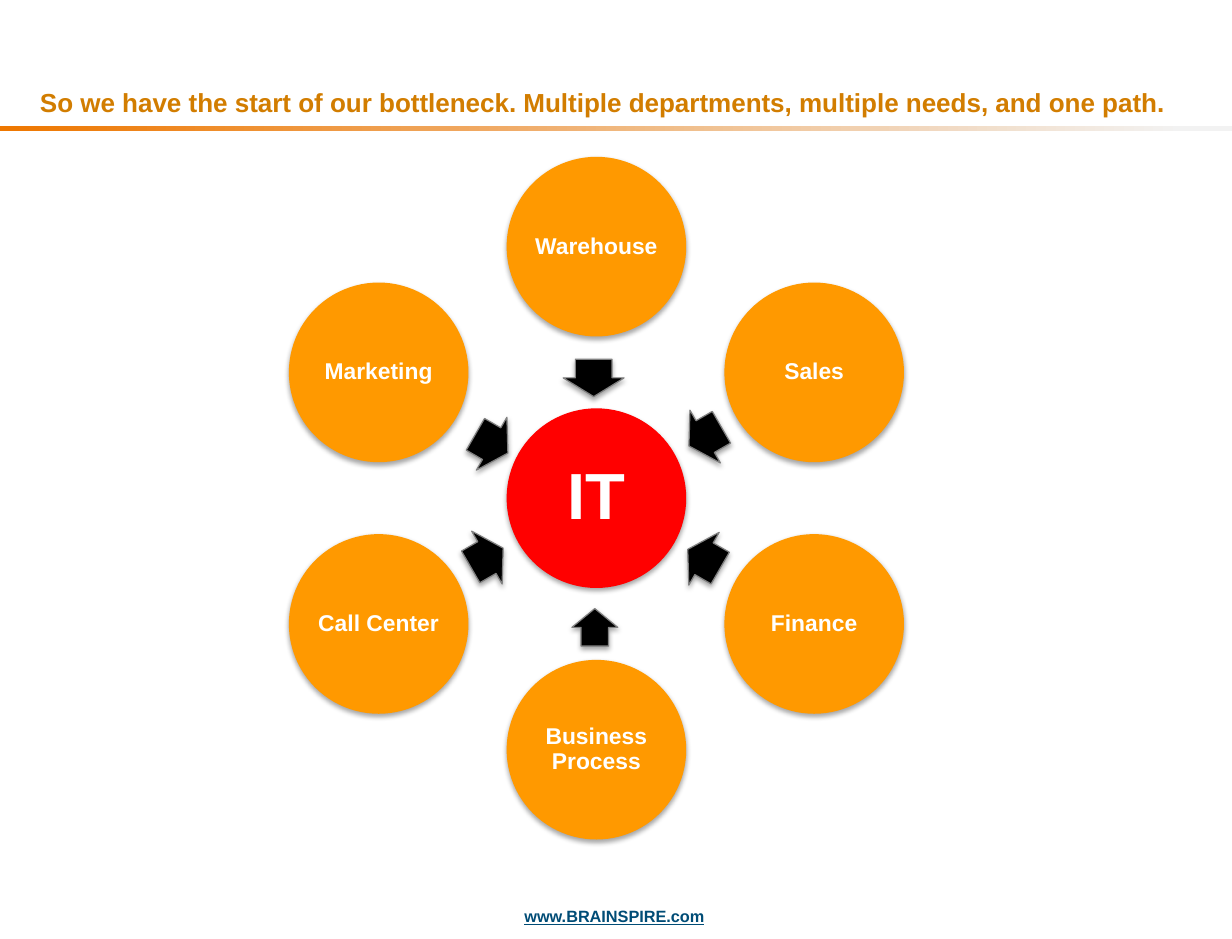
from math import cos, radians, sin

from lxml.etree import SubElement
from pptx import Presentation
from pptx.dml.color import RGBColor
from pptx.enum.shapes import MSO_SHAPE
from pptx.enum.text import MSO_ANCHOR, MSO_AUTO_SIZE, PP_ALIGN
from pptx.oxml.ns import qn
from pptx.util import Pt

COLORS = {
    "title": "D27D00", "link": "004C76", "bar": "EE7700", "fade": "F2F2F2",
    "hub": "FF0000", "dept": "FF9900", "arrow": "000000", "edge": "808080",
    "white": "FFFFFF", "shade": "000000",
}
HUB_X, HUB_Y = 366, 305.6
RING = 154.3
SIZE = 110.2

# Department, angle on the ring, arrow centre, arrow breadth
DEPTS = [
    ("Warehouse", -90, 364.3, 231.8, 37.4),
    ("Sales", -30, 432.7, 267.8, 37.4),
    ("Finance", 30, 432, 342.7, 37.4),
    ("Business Process", 90, 365, 384.8, 28.1),
    ("Call Center", 150, 298.8, 342, 37.4),
    ("Marketing", 210, 301.7, 272.2, 37.4),
]


def rgb(name):
    return RGBColor.from_string(COLORS[name])


class Deck:
    """Holds the style and the current slide."""

    font = "Arial"

    def __init__(self, wide, high):
        self.prs = Presentation()
        self.prs.slide_width, self.prs.slide_height = Pt(wide), Pt(high)
        self.slide = self.prs.slides.add_slide(self.prs.slide_layouts[5])

    def add_run(self, frame, text, size, color, align, line=False):
        para = frame.paragraphs[0]
        para.alignment = align
        run = para.add_run()
        run.text = text
        font = run.font
        font.name, font.size, font.bold = self.font, Pt(size), True
        font.color.rgb = rgb(color)
        if line:
            font.underline = True
        return para

    def title(self, text, x, y, w, h):
        box = self.slide.shapes.title
        box.left, box.top, box.width, box.height = Pt(x), Pt(y), Pt(w), Pt(h)
        frame = box.text_frame
        frame.auto_size = MSO_AUTO_SIZE.NONE
        frame.vertical_anchor = MSO_ANCHOR.BOTTOM
        frame.margin_left = frame.margin_right = Pt(7.9)
        self.add_run(frame, text, 16, "title", PP_ALIGN.LEFT)

    def label(self, text, x, y, w, h):
        box = self.slide.shapes.add_textbox(Pt(x), Pt(y), Pt(w), Pt(h))
        box.text_frame.word_wrap = True
        self.add_run(box.text_frame, text, 10, "link", PP_ALIGN.CENTER, True)

    def shape(self, kind, x, y, w, h):
        item = self.slide.shapes.add_shape(kind, Pt(x), Pt(y), Pt(w), Pt(h))
        item.shadow.inherit = False
        item.line.fill.background()
        return item

    def shade(self, item):
        effects = item.element.spPr.find(qn("a:effectLst"))
        outer = SubElement(effects, qn("a:outerShdw"), blurRad=str(Pt(3.1)),
                           dist=str(Pt(1.8)), dir="5400000", rotWithShape="0")
        tone = SubElement(outer, qn("a:srgbClr"), val=COLORS["shade"])
        SubElement(tone, qn("a:alpha"), val="35000")

    def bar(self, x, y, w, h):
        fill = self.shape(MSO_SHAPE.RECTANGLE, x, y, w, h).fill
        fill.gradient()
        fill.gradient_angle = 0
        for stop, name, spot in zip(fill.gradient_stops, ("bar", "fade"), (0, 0.96)):
            stop.color.rgb = rgb(name)
            stop.position = spot

    def disc(self, text, x, y, color, size, inset):
        item = self.shape(MSO_SHAPE.OVAL, x - SIZE / 2, y - SIZE / 2, SIZE, SIZE)
        item.fill.solid()
        item.fill.fore_color.rgb = rgb(color)
        self.shade(item)
        frame = item.text_frame
        frame.word_wrap = True
        frame.vertical_anchor = MSO_ANCHOR.MIDDLE
        frame.margin_left = frame.margin_right = Pt(inset)
        frame.margin_top = frame.margin_bottom = Pt(inset)
        para = self.add_run(frame, text, size, "white", PP_ALIGN.CENTER)
        para.line_spacing = 0.9

    def arrow(self, x, y, broad, turn):
        long = 23
        item = self.shape(MSO_SHAPE.RIGHT_ARROW, x - long / 2, y - broad / 2, long, broad)
        item.adjustments[0], item.adjustments[1] = 0.6, 0.5
        item.rotation = turn
        item.fill.solid()
        item.fill.fore_color.rgb = rgb("arrow")
        item.line.color.rgb = rgb("edge")
        item.line.width = Pt(0.75)
        self.shade(item)


def main():
    deck = Deck(756, 576)

    # Heading, rule and footer
    deck.bar(0, 77, 756, 3.6)
    deck.label("www.BRAINSPIRE.com", 314, 552.2, 126, 19.4)
    deck.title("So we have the start of our bottleneck. Multiple departments, "
               "multiple needs, and one path.", 16.6, 15.8, 721.4, 59.8)

    # Hub with departments around it, arrows pointing inward
    deck.disc("IT", HUB_X, HUB_Y, "hub", 40, 4)
    for name, angle, x, y, broad in DEPTS:
        deck.arrow(x, y, broad, (angle + 180) % 360)
        turn = radians(angle)
        deck.disc(name, HUB_X + RING * cos(turn), HUB_Y + RING * sin(turn),
                  "dept", 14, 1.4)

    deck.prs.save("out.pptx")


if __name__ == "__main__":
    main()
